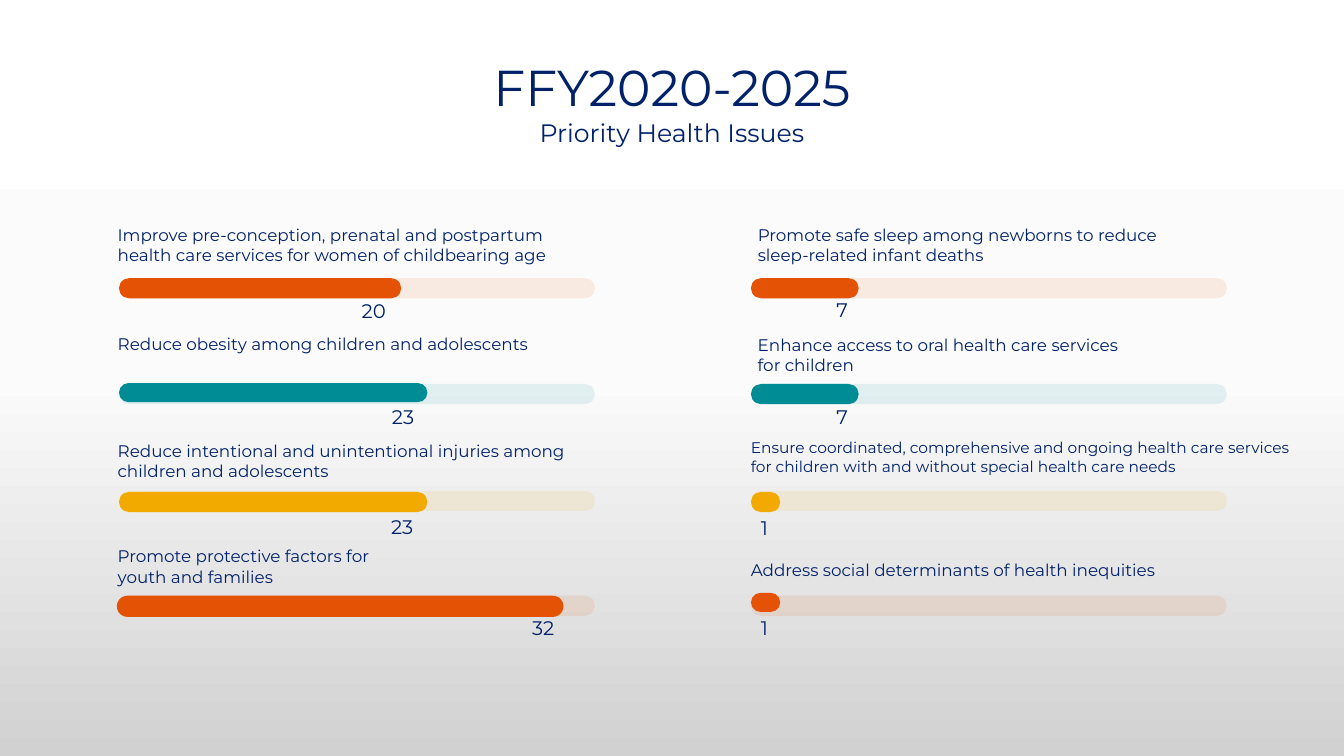
from copy import deepcopy
from dataclasses import dataclass

from lxml.etree import SubElement
from pptx import Presentation
from pptx.dml.color import RGBColor
from pptx.dml.fill import FillFormat
from pptx.enum.shapes import MSO_SHAPE as Kind
from pptx.enum.text import MSO_ANCHOR as Anchor, PP_ALIGN as Align
from pptx.oxml.ns import qn
from pptx.slide import Slide
from pptx.text.text import TextFrame
from pptx.util import Pt

NAVY, RUST, TEAL, GOLD = "012169", "E35205", "008C95", "F2A900"
TRACK_W, BAR_H = 340, 14.4


@dataclass
class Bar:
    left: float
    top: float
    width: float
    hue: str
    height: float = BAR_H


@dataclass
class Issue:
    label: str
    left: float
    top: float
    width: float
    bar: Bar
    value: int
    val_x: float
    val_y: float
    size: float = 12


TRACKS = [(198.7, RUST), (274.3, TEAL), (350.6, GOLD), (425.5, RUST)]
LEFT_X, RIGHT_X = 85, 536.4

ISSUES = [
    Issue("Improve pre-conception, prenatal and postpartum\n"
          "health care services for women of childbearing age",
          77, 157, 348, Bar(LEFT_X, 198.7, 201.6, RUST), 20, 251.3, 210.2),
    Issue("Reduce obesity among children and adolescents",
          77, 234.7, 326, Bar(LEFT_X, 273.6, 220.3, TEAL, 13.7), 23, 272.9, 285.8),
    Issue("Reduce intentional and unintentional injuries among children and adolescents",
          77, 311, 364, Bar(LEFT_X, 351.4, 220.3, GOLD), 23, 272.2, 364.3),
    Issue("Promote protective factors for\nyouth and families",
          77, 386.6, 318, Bar(83.5, 425.5, 319, RUST, 15.1), 32, 373, 436.3),
    Issue("Promote safe sleep among newborns to reduce\nsleep-related infant deaths",
          534.2, 157, 326, Bar(RIGHT_X, 198.7, 77, RUST), 7, 590.4, 209.5),
    Issue("Enhance access to oral health care services\nfor children",
          534.2, 235.4, 376, Bar(RIGHT_X, 274.3, 77, TEAL), 7, 590.4, 285.8),
    Issue("Ensure coordinated, comprehensive and ongoing health care services "
          "for children with and without special health care needs",
          529.2, 309.6, 405.4, Bar(RIGHT_X, 351.4, 20.9, GOLD), 1, 536.4, 365, 11),
    Issue("Address social determinants of health inequities",
          529.2, 396, 400, Bar(RIGHT_X, 423.4, 20.9, RUST, 13.7), 1, 536.4, 436.3),
]


def paint(fill: FillFormat, hue: str, alpha: int = 100) -> None:
    fill.solid()
    fill.fore_color.rgb = RGBColor.from_string(hue)
    if alpha < 100:
        tint = fill.fore_color._xFill.find(qn("a:srgbClr"))
        SubElement(tint, qn("a:alpha"), val=str(alpha * 1000))


def write(frame: TextFrame, text: str, *, size: float = 12, align: Align = Align.LEFT,
          anchor: Anchor = Anchor.TOP, space: float = 1, before: float = 0) -> None:
    frame.word_wrap = True
    frame.vertical_anchor = anchor
    frame.text = text
    for para in frame.paragraphs:
        para.alignment = align
        para.line_spacing = space
        para.space_before = Pt(before)
        for run in para.runs:
            run.font.name = "Montserrat"
            run.font.size = Pt(size)
            paint(run.font.fill, NAVY)


def place(shape, left: float, top: float, width: float, height: float) -> None:
    shape.left, shape.top = Pt(left), Pt(top)
    shape.width, shape.height = Pt(width), Pt(height)


def label(slide: Slide, text: str, left: float, top: float, width: float,
          height: float, size: float) -> None:
    box = slide.shapes.add_textbox(Pt(left), Pt(top), Pt(width), Pt(height))
    write(box.text_frame, text, size=size)


def draw_bar(slide: Slide, bar: Bar, alpha: int = 100) -> None:
    pill = slide.shapes.add_shape(Kind.ROUNDED_RECTANGLE, Pt(bar.left), Pt(bar.top),
                                  Pt(bar.width), Pt(bar.height))
    pill.adjustments[0] = 0.5
    pill.shadow.inherit = False
    pill.line.fill.background()
    paint(pill.fill, bar.hue, alpha)


def shade(slide: Slide) -> None:
    fill = slide.background.fill
    fill.gradient()
    fill.gradient_angle = 270
    stops = slide.element.find(".//" + qn("a:gsLst"))
    stops.insert(1, deepcopy(stops[0]))
    for stop, (spot, hue) in zip(fill.gradient_stops,
                                 [(0, "FFFFFF"), (0.5, "FBFBFB"), (1, "D1D1D1")]):
        stop.position = spot
        stop.color.rgb = RGBColor.from_string(hue)


def main() -> None:
    deck = Presentation()
    deck.slide_width, deck.slide_height = Pt(960), Pt(540)
    slide = deck.slides.add_slide(deck.slide_layouts[0])
    shade(slide)

    title, sub = slide.placeholders
    place(title, 66, 29.5, 828, 70)
    write(title.text_frame, "FFY2020-2025", size=36, align=Align.CENTER,
          anchor=Anchor.MIDDLE, space=0.9)
    place(sub, 120, 82.8, 720, 34.6)
    write(sub.text_frame, "Priority Health Issues", size=18, align=Align.CENTER,
          space=0.9, before=10)

    for top, hue in TRACKS:
        for left in (LEFT_X, RIGHT_X):
            draw_bar(slide, Bar(left, top, TRACK_W, hue), alpha=10)
    for item in ISSUES:
        draw_bar(slide, item.bar)
        label(slide, item.label, item.left, item.top, item.width, 36, item.size)
        label(slide, str(item.value), item.val_x, item.val_y, 46, 24.5, 14)

    deck.save("out.pptx")


if __name__ == "__main__":
    main()
